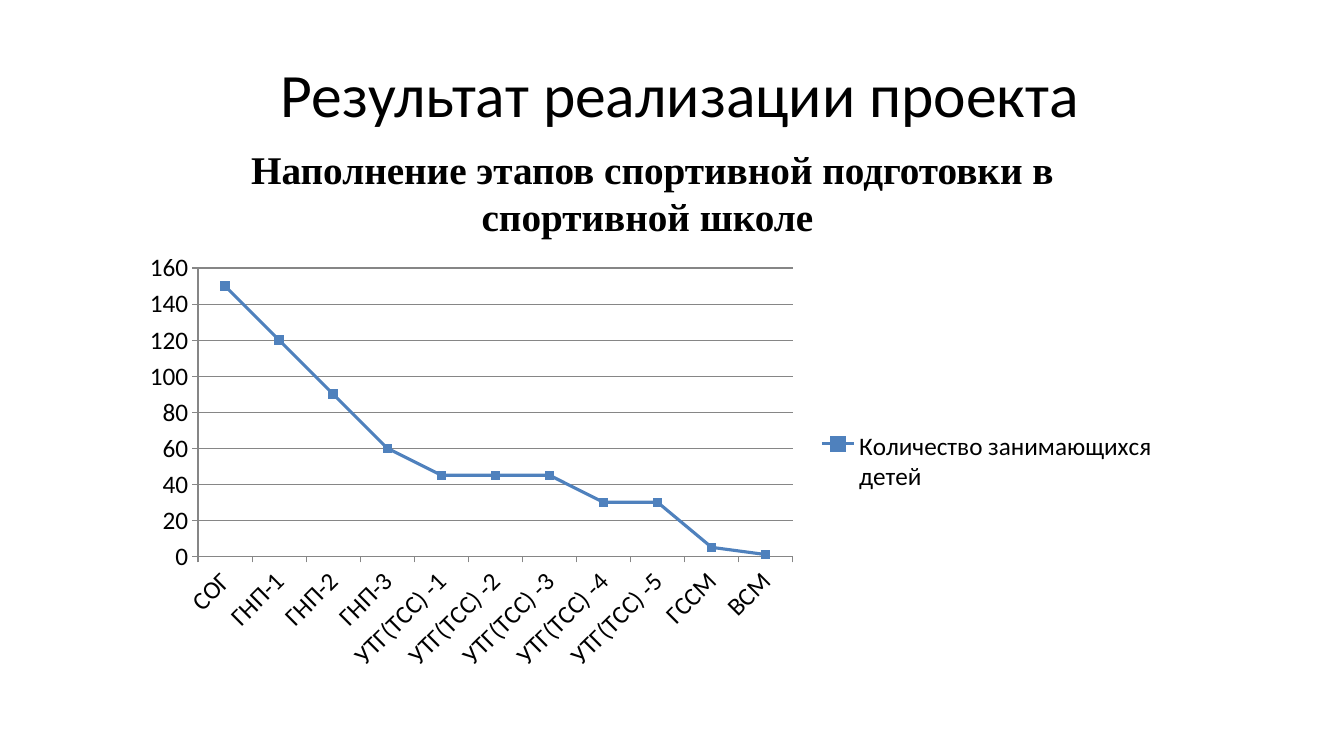
import pptx
import pptx.chart.data
import pptx.dml.color
import pptx.enum.chart
import pptx.enum.text
import pptx.util

Cm = pptx.util.Cm
Pt = pptx.util.Pt
BLACK = pptx.dml.color.RGBColor(0x00, 0x00, 0x00)
BLUE = pptx.dml.color.RGBColor(0x4F, 0x81, 0xBD)
GREY = pptx.dml.color.RGBColor(0x86, 0x86, 0x86)

STAGE_COUNTS = {
    "СОГ": 150,
    "ГНП-1": 120,
    "ГНП-2": 90,
    "ГНП-3": 60,
    "УТГ(ТСС) -1": 45,
    "УТГ(ТСС) -2": 45,
    "УТГ(ТСС) -3": 45,
    "УТГ(ТСС) -4": 30,
    "УТГ(ТСС) -5": 30,
    "ГССМ": 5,
    "ВСМ": 1,
}


def write_text(frame, text, *, font, size, bold=False):
    paragraph = frame.paragraphs[0]
    paragraph.alignment = pptx.enum.text.PP_ALIGN.CENTER
    run = paragraph.add_run()
    run.text = text
    run.font.name = font
    run.font.size = Pt(size)
    run.font.bold = bold
    run.font.color.rgb = BLACK


class ResultSlide:
    chart_font = "Calibri"
    chart_size = Pt(18)

    def __init__(self, presentation):
        self.slide = presentation.slides.add_slide(presentation.slide_layouts[6])

    def text(self, text, left, top, width, height, anchor, **style):
        box = self.slide.shapes.add_textbox(Cm(left), Cm(top), Cm(width), Cm(height))
        box.text_frame.word_wrap = True
        box.text_frame.vertical_anchor = anchor
        write_text(box.text_frame, text, **style)

    def line_chart(self, name, counts, left, top, width, height):
        data = pptx.chart.data.CategoryChartData()
        data.categories = list(counts)
        data.add_series(name, list(counts.values()))
        chart = self.slide.shapes.add_chart(
            pptx.enum.chart.XL_CHART_TYPE.LINE_MARKERS,
            Cm(left), Cm(top), Cm(width), Cm(height), data).chart
        chart.has_title = False
        chart.font.name = self.chart_font
        chart.font.size = self.chart_size
        chart.font.color.rgb = BLACK
        chart.plots[0].vary_by_categories = False

        # Legend
        chart.has_legend = True
        chart.legend.position = pptx.enum.chart.XL_LEGEND_POSITION.RIGHT
        chart.legend.include_in_layout = False

        # Axes and gridlines
        chart.value_axis.maximum_scale = 160
        chart.value_axis.minimum_scale = 0
        chart.value_axis.major_unit = 20
        chart.value_axis.has_major_gridlines = True
        lines = [chart.value_axis.major_gridlines.format.line]
        for axis in (chart.category_axis, chart.value_axis):
            axis.major_tick_mark = pptx.enum.chart.XL_TICK_MARK.OUTSIDE
            axis.minor_tick_mark = pptx.enum.chart.XL_TICK_MARK.NONE
            lines.append(axis.format.line)
        for line in lines:
            line.color.rgb = GREY
            line.width = Pt(0.75)

        # Series line and square markers
        series = chart.plots[0].series[0]
        series.smooth = False
        series.format.line.color.rgb = BLUE
        series.format.line.width = Pt(2.25)
        series.marker.style = pptx.enum.chart.XL_MARKER_STYLE.SQUARE
        series.marker.size = 6
        series.marker.format.fill.solid()
        series.marker.format.fill.fore_color.rgb = BLUE
        series.marker.format.line.color.rgb = BLUE


def main():
    presentation = pptx.Presentation()
    presentation.slide_width = Cm(33.87)
    presentation.slide_height = Cm(19.05)
    result = ResultSlide(presentation)

    # Title and chart heading
    result.text("Результат реализации проекта ", 4.62, 0.76, 25.4, 3.18,
                pptx.enum.text.MSO_ANCHOR.MIDDLE, font="Calibri", size=44)
    result.text("Наполнение этапов спортивной подготовки в спортивной школе ",
                3.84, 4.37, 25.2, 1.78, pptx.enum.text.MSO_ANCHOR.BOTTOM,
                font="Times New Roman", size=28, bold=True)

    # Children at each training stage
    result.line_chart("Количество занимающихся детей", STAGE_COUNTS,
                      3.25, 6.15, 26.19, 10.97)

    presentation.save("out.pptx")


if __name__ == "__main__":
    main()
